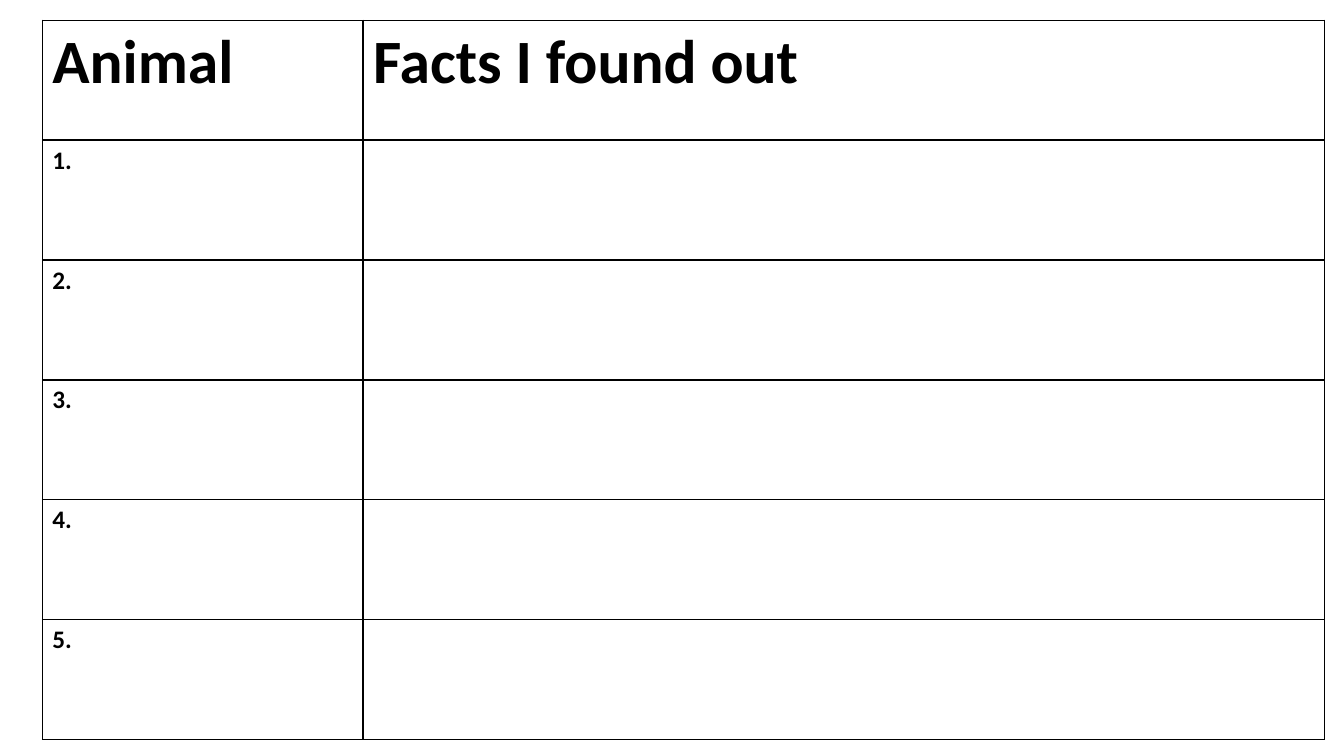
from lxml import etree
from pptx import Presentation, util as u
from pptx.dml.color import RGBColor
from pptx.oxml import ns

SLIDE_WIDTH, SLIDE_HEIGHT = u.Inches(13.33), u.Inches(7.5)
LEFT, TOP = u.Inches(0.42), u.Inches(0.2)
COLUMN, ROW = u.Inches(3.18), u.Inches(1.19)
COLUMN_SHARES = (1, 3)
HEADINGS = ("Animal", "Facts I found out")
ANIMAL_COUNT = 5
INK, PAPER = "000000", "FFFFFF"


def color(value):
    return RGBColor.from_string(value)


def add_borders(cell):
    properties = cell._tc.get_or_add_tcPr()
    for side in ("L", "R", "T", "B"):
        line = etree.SubElement(properties, ns.qn(f"a:ln{side}"), w=str(u.Pt(1)))
        fill = etree.SubElement(line, ns.qn("a:solidFill"))
        etree.SubElement(fill, ns.qn("a:srgbClr"), val=INK)


def write(cell, words, size):
    run = cell.text_frame.paragraphs[0].add_run()
    run.text = words
    run.font.name = "Calibri"
    run.font.size = u.Pt(size)
    run.font.bold = True
    run.font.color.rgb = color(INK)


def add_fact_table(slide):
    row_count = ANIMAL_COUNT + 1
    table = slide.shapes.add_table(
        row_count, len(COLUMN_SHARES), LEFT, TOP,
        COLUMN * sum(COLUMN_SHARES), ROW * row_count,
    ).table
    table.first_row = False
    table.horz_banding = False
    for column, share in zip(table.columns, COLUMN_SHARES):
        column.width = COLUMN * share
    for row in table.rows:
        row.height = ROW
    for cell in table.iter_cells():
        add_borders(cell)
        cell.fill.solid()
        cell.fill.fore_color.rgb = color(PAPER)
    for index, heading in enumerate(HEADINGS):
        write(table.cell(0, index), heading, 44)
    for number in range(1, row_count):
        write(table.cell(number, 0), f"{number}.", 18)


def main():
    presentation = Presentation()
    presentation.slide_width = SLIDE_WIDTH
    presentation.slide_height = SLIDE_HEIGHT
    slide = presentation.slides.add_slide(presentation.slide_layouts[6])
    add_fact_table(slide)
    presentation.save("out.pptx")


if __name__ == "__main__":
    main()
